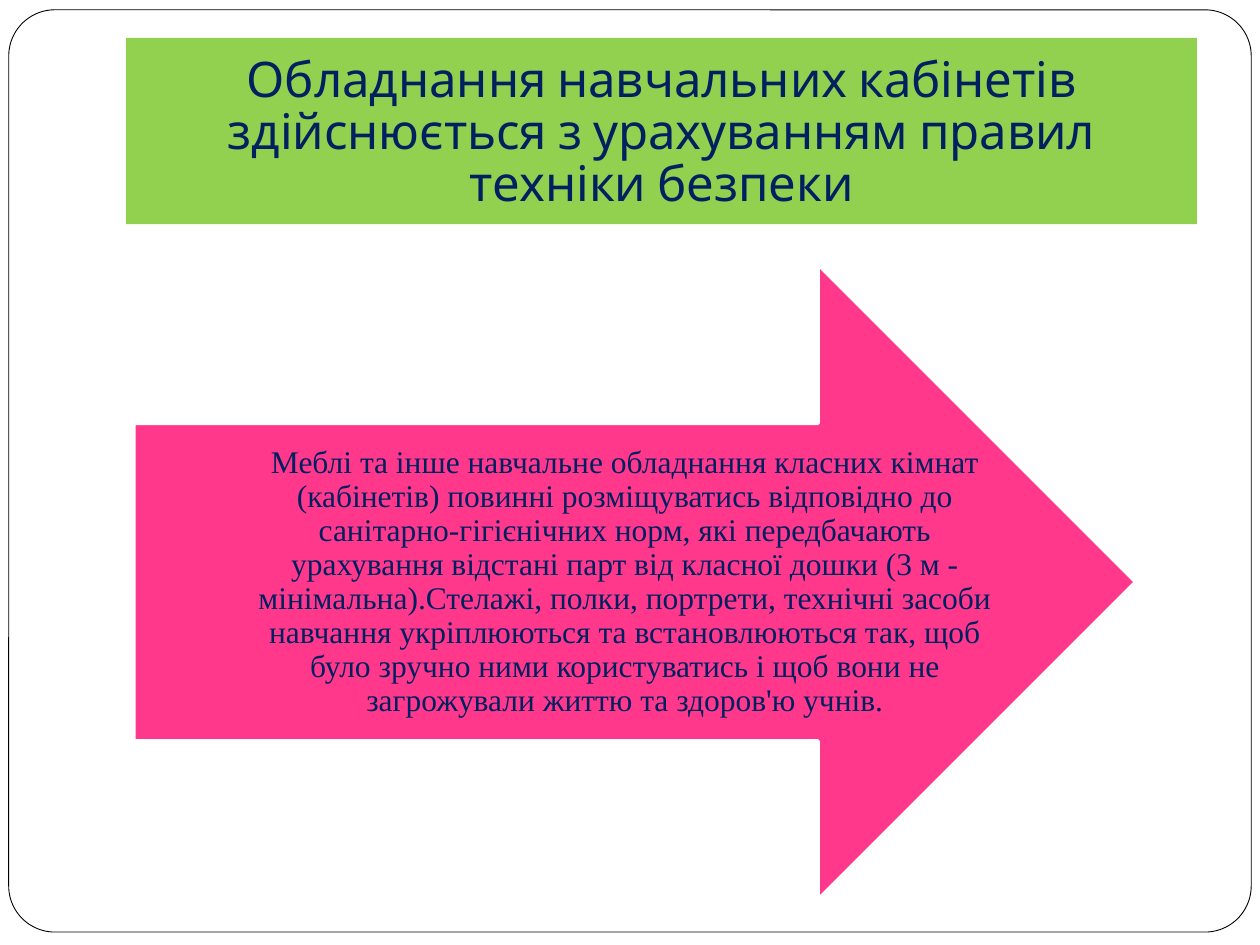
import dataclasses

import pptx
import pptx.dml.color
import pptx.enum.shapes
import pptx.enum.text
import pptx.util

Pt = pptx.util.Pt
RGB = pptx.dml.color.RGBColor.from_string
SHAPES = pptx.enum.shapes.MSO_SHAPE
ANCHOR = pptx.enum.text.MSO_ANCHOR


@dataclasses.dataclass(frozen=True)
class Theme:
    paper: str = "FFFFFF"
    frame: str = "000000"
    title_fill: str = "92D050"
    arrow_fill: str = "FF388C"
    text: str = "002060"
    title_font: str = "Cabin"
    body_font: str = "Times New Roman"
    title_size: float = 28
    body_size: float = 18


THEME = Theme()
TITLE = "Обладнання навчальних кабінетів здійснюється з урахуванням правил техніки безпеки"
BODY = (
    "Меблі та інше навчальне обладнання класних кімнат (кабінетів) повинні "
    "розміщуватись відповідно до санітарно-гігієнічних норм, які передбачають "
    "урахування відстані парт від класної дошки (3 м - мінімальна).Стелажі, полки, "
    "портрети, технічні засоби навчання укріплюються та встановлюються так, щоб "
    "було зручно ними користуватись і щоб вони не загрожували життю та здоров'ю учнів."
)


def add_outline_shape(slide, kind, box, fill, line, width):
    shape = slide.shapes.add_shape(kind, *map(Pt, box))
    shape.shadow.inherit = False
    shape.fill.solid()
    shape.fill.fore_color.rgb = RGB(fill)
    shape.line.color.rgb = RGB(line)
    shape.line.width = Pt(width)
    return shape


def write_text(shape, text, font, size, anchor, insets, spacing):
    frame = shape.text_frame
    frame.word_wrap = True
    frame.auto_size = pptx.enum.text.MSO_AUTO_SIZE.NONE
    frame.vertical_anchor = anchor
    (frame.margin_left, frame.margin_top,
     frame.margin_right, frame.margin_bottom) = map(Pt, insets)
    paragraph = frame.paragraphs[0]
    paragraph.alignment = pptx.enum.text.PP_ALIGN.CENTER
    paragraph.line_spacing = spacing
    run = paragraph.add_run()
    run.text = text
    run.font.name = font
    run.font.size = Pt(size)
    run.font.color.rgb = RGB(THEME.text)


def format_title(slide, box):
    title = slide.shapes.title
    title.left, title.top, title.width, title.height = map(Pt, box)
    title.fill.solid()
    title.fill.fore_color.rgb = RGB(THEME.title_fill)
    write_text(title, TITLE, THEME.title_font, THEME.title_size,
               ANCHOR.BOTTOM, (7.2, 3.6, 7.2, 7.2), 0.88)
    # Bring the title in front of the page frame
    title.element.getparent().append(title.element)


def main():
    presentation = pptx.Presentation()
    presentation.slide_width, presentation.slide_height = Pt(720), Pt(540)
    slide = presentation.slides.add_slide(presentation.slide_layouts[5])

    # Rounded page frame
    frame = add_outline_shape(slide, SHAPES.ROUNDED_RECTANGLE, (5, 5.6, 710, 527),
                              THEME.paper, THEME.frame, 0.5)
    frame.adjustments[0] = 0.05

    # Title band
    format_title(slide, (72, 21.6, 612, 106.56))

    # Arrow with the requirements
    add_outline_shape(slide, SHAPES.RIGHT_ARROW, (76.5, 151.2, 572.4, 362.88),
                      THEME.arrow_fill, THEME.paper, 2)
    body = slide.shapes.add_textbox(*map(Pt, (140.4, 241.92, 433.44, 181.44)))
    write_text(body, BODY, THEME.body_font, THEME.body_size,
               ANCHOR.MIDDLE, (0, 14.4, 0, 14.4), 0.9)

    presentation.save("out.pptx")


if __name__ == "__main__":
    main()
